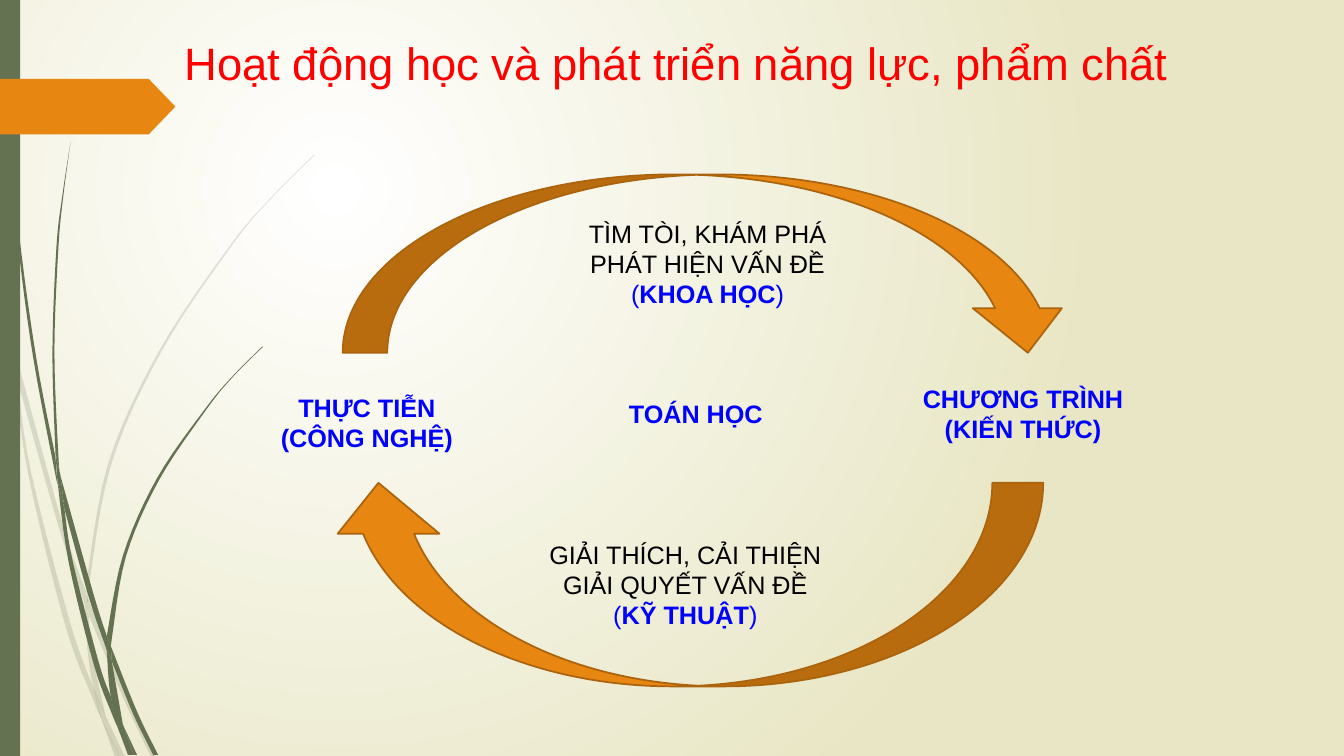
"""Build the slide on learning activities as a cycle between practice and curriculum."""
from lxml.etree import SubElement
from pptx import Presentation
from pptx.dml.color import RGBColor
from pptx.enum.shapes import MSO_SHAPE as Preset
from pptx.enum.text import MSO_ANCHOR as Anchor, PP_ALIGN as Align
from pptx.oxml.ns import qn
from pptx.util import Pt

COLORS = {
    "white": "FFFFFF", "sand": "E8E6C4", "moss": "647252", "orange": "E78712",
    "rust": "AB640D", "red": "FF0000", "blue": "0000FF", "black": "000000",
}
GRID = 0.72
CURVE_STEPS = 6

FAINT_GRASS = [
    [[(11, 350), (9, 322), (0, 282)], [(0, 299), (10, 344)]],
    [[(14, 345), (62, 520), (85, 586)], [(84, 599), (58, 522), (17, 376)]],
    [[(88, 596), (127, 692), (155, 751)], [(150, 751), (123, 694), (88, 610)]],
    [[(105, 711), (124, 751)], [(119, 751)]],
    [[(11, 350), (28, 470), (65, 621), (92, 693), (101, 714)],
     [(93, 683), (70, 619), (31, 469), (17, 376)]],
    [[(84, 599), (87, 646), (93, 683), (105, 711)], [(105, 711), (91, 646), (88, 610)]],
    [[(88, 596), (88, 584), (110, 462), (160, 349), (229, 245), (268, 198), (312, 154)],
     [(312, 153), (268, 197), (228, 244), (158, 348), (107, 461), (85, 584)]],
    [[(101, 714), (114, 751)], [(119, 751)]],
    [[(88, 608), (88, 596)], [(85, 586), (84, 599)]],
    [[(93, 683), (101, 714), (119, 751)], [(105, 711)]],
]
DARK_GRASS = [
    [[(3, 0), (4, 48), (7, 110), (17, 233), (33, 355), (57, 481)],
     [(55, 453), (36, 355), (19, 232), (8, 109), (5, 48), (4, 0)]],
    [[(60, 472), (93, 590), (106, 631)], [(106, 645), (88, 592), (64, 505)]],
    [[(110, 641), (136, 706), (157, 749)], [(152, 749), (132, 708), (111, 656)]],
    [[(57, 477), (68, 557), (93, 659), (111, 708), (117, 722)],
     [(110, 691), (98, 657), (72, 556), (64, 505)]],
    [[(70, 141), (63, 193), (58, 245), (54, 349), (58, 453), (60, 472)],
     [(55, 449), (52, 349), (56, 245), (62, 193), (70, 141)]],
    [[(122, 719), (136, 749)], [(133, 749)]],
    [[(57, 477), (64, 505)], [(60, 472), (55, 449)]],
    [[(111, 633), (125, 552), (158, 476), (205, 406), (231, 374), (261, 344)],
     [(260, 344), (231, 373), (204, 405), (156, 474), (122, 551), (106, 631)],
     [(110, 641)]],
    [[(117, 722), (127, 749)], [(131, 749)]],
    [[(106, 645), (110, 691), (122, 719)], [(111, 656)]],
    [[(106, 645), (111, 656)], [(110, 641), (106, 631)]],
    [[(110, 691), (117, 722), (130, 749)], [(133, 749), (122, 719)]],
]


def smooth(knots):
    """Return points in EMU on a Catmull-Rom curve through the knots."""
    padded = [knots[0], *knots, knots[-1]]
    curve = [knots[0]]
    for a, b, c, d in zip(padded, padded[1:], padded[2:], padded[3:]):
        for step in range(1, CURVE_STEPS + 1):
            t = step / CURVE_STEPS
            curve.append([
                q + t * (r - p) / 2 + t**2 * (2 * p - 5 * q + 4 * r - s) / 2
                + t**3 * (3 * q - p - 3 * r + s) / 2
                for p, q, r, s in zip(a, b, c, d)
            ])
    return [(Pt(GRID * x), Pt(GRID * y)) for x, y in curve]


def style_font(font, size, color, bold=False):
    """Set the typeface, size, colour and weight of a font."""
    font.name = "Arial"
    font.size = Pt(size)
    font.bold = bold
    font.color.rgb = RGBColor.from_string(COLORS[color])


deck = Presentation()
deck.slide_width, deck.slide_height = Pt(960), Pt(540)
slide = deck.slides.add_slide(deck.slide_layouts[5])

backdrop = slide.background.fill
backdrop.gradient()
for stop, color in zip(backdrop.gradient_stops, ("white", "sand")):
    stop.color.rgb = RGBColor.from_string(COLORS[color])
gradient = slide.element.find(".//" + qn("a:gradFill"))
gradient.remove(gradient.find(qn("a:lin")))
glow = SubElement(gradient, qn("a:path"), path="circle")
SubElement(glow, qn("a:fillToRect"), l="50000", t="50000", r="100000", b="100000")

for blades, opacity in ((FAINT_GRASS, 20), (DARK_GRASS, 100)):
    grass = slide.shapes.add_group_shape()
    for edges in blades:
        outline = [point for edge in edges for point in smooth(edge)]
        builder = grass.shapes.build_freeform(*outline[0])
        builder.add_line_segments(outline[1:], close=True)
        blade = builder.convert_to_shape()
        blade.shadow.inherit = False
        blade.line.fill.background()
        blade.fill.solid()
        blade.fill.fore_color.rgb = RGBColor.from_string(COLORS["moss"])
        if opacity < 100:
            tint = blade.element.spPr.find(".//" + qn("a:srgbClr"))
            SubElement(tint, qn("a:alpha"), val=str(opacity * 1000))

side_bar = slide.shapes.add_shape(Preset.RECTANGLE, 0, 0, Pt(14.4), Pt(540))
page_tag = slide.shapes.add_shape(Preset.PENTAGON, 0, Pt(56.3), Pt(125.3), Pt(39.7))
page_tag.adjustments[0] = 0.48
for ornament, color in ((side_bar, "moss"), (page_tag, "orange")):
    ornament.shadow.inherit = False
    ornament.line.fill.background()
    ornament.fill.solid()
    ornament.fill.fore_color.rgb = RGBColor.from_string(COLORS[color])

heading = slide.shapes.title
heading.left, heading.top, heading.width, heading.height = Pt(124.6), Pt(21.6), Pt(769.7), Pt(69.1)
heading.text_frame.text = "Hoạt động học và phát triển năng lực, phẩm chất"
heading.text_frame.vertical_anchor = Anchor.TOP
heading.text_frame.paragraphs[0].alignment = Align.LEFT
style_font(heading.text_frame.paragraphs[0].runs[0].font, 32.4, "red")

for wording, left, top, width, height, alignment in (
    ("THỰC TIỄN (CÔNG NGHỆ)", 177.1, 276.5, 169.9, 51.1, Align.CENTER),
    ("CHƯƠNG TRÌNH (KIẾN THỨC)", 648, 270, 165.6, 51.1, Align.CENTER),
    ("TOÁN HỌC", 442.1, 280.8, 121, 28.8, Align.LEFT),
):
    label = slide.shapes.add_textbox(Pt(left), Pt(top), Pt(width), Pt(height)).text_frame
    label.word_wrap = True
    label.text = wording
    label.paragraphs[0].alignment = alignment
    style_font(label.paragraphs[0].runs[0].font, 18, "blue", True)

for preset, left, top, width, height, mirrored, steps, field in (
    (Preset.CURVED_DOWN_ARROW, 244.8, 124.6, 521.3, 127.4, False,
     ("TÌM TÒI, KHÁM PHÁ", "PHÁT HIỆN VẤN ĐỀ"), "KHOA HỌC"),
    (Preset.CURVED_UP_ARROW, 234, 344.9, 511.2, 145.4, True,
     ("GIẢI THÍCH, CẢI THIỆN", "GIẢI QUYẾT VẤN ĐỀ"), "KỸ THUẬT"),
):
    arrow = slide.shapes.add_shape(preset, Pt(left), Pt(top), Pt(width), Pt(height))
    arrow.shadow.inherit = False
    arrow.fill.solid()
    arrow.fill.fore_color.rgb = RGBColor.from_string(COLORS["orange"])
    arrow.line.color.rgb = RGBColor.from_string(COLORS["rust"])
    arrow.line.width = Pt(1.25)
    if mirrored:
        arrow.element.spPr.find(qn("a:xfrm")).set("flipH", "1")
    caption = arrow.text_frame
    caption.vertical_anchor = Anchor.MIDDLE
    caption.text = "\n".join(steps)
    for step in caption.paragraphs:
        style_font(step.runs[0].font, 18, "black")
    field_line = caption.add_paragraph()
    for part in ("(", field, ")"):
        run = field_line.add_run()
        run.text = part
        style_font(run.font, 18, "blue", part == field)
    for line in caption.paragraphs:
        line.alignment = Align.CENTER

deck.save("out.pptx")
